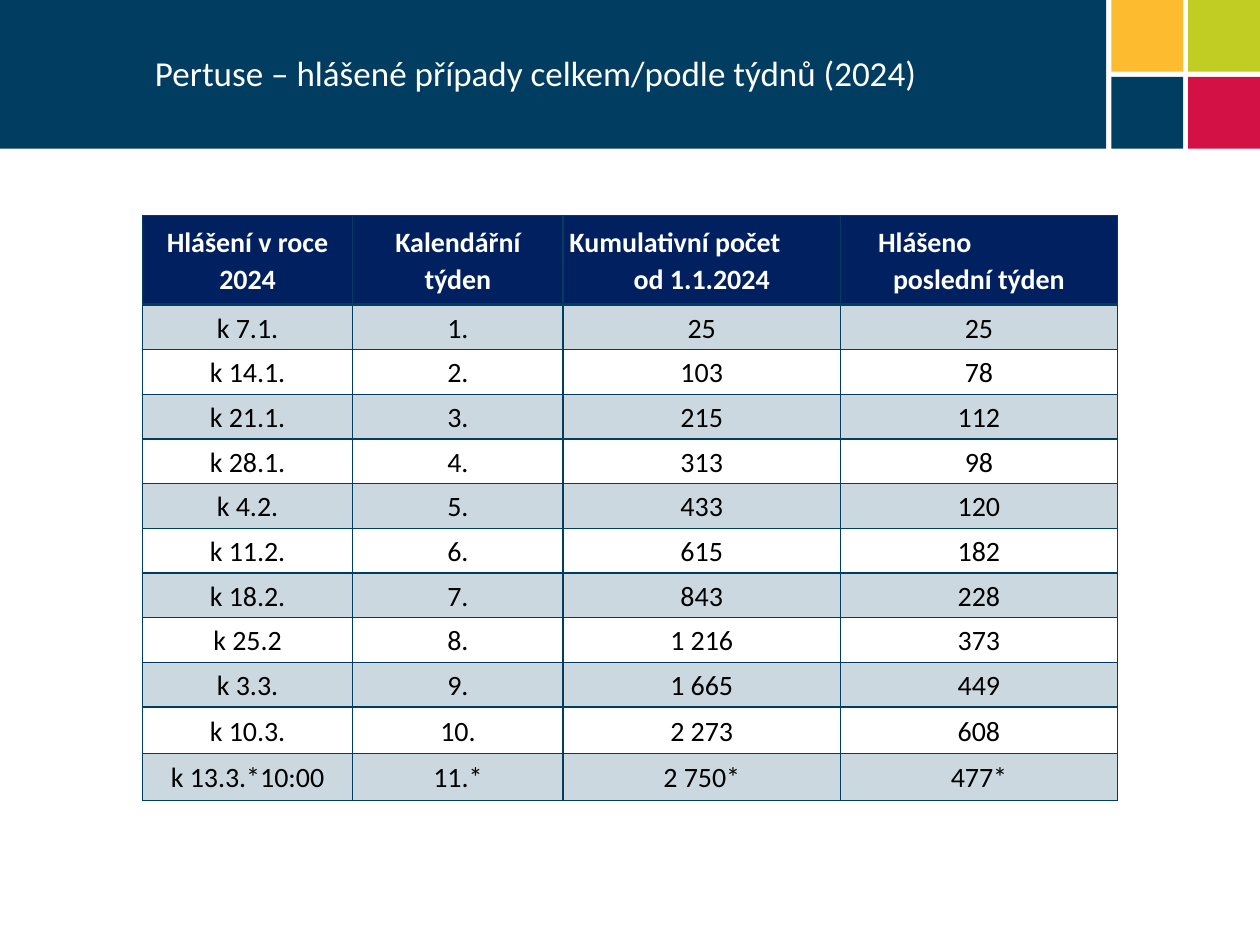
from dataclasses import dataclass

from lxml.etree import SubElement
from pptx import Presentation
from pptx.dml.color import RGBColor
from pptx.enum.shapes import MSO_SHAPE
from pptx.enum.text import MSO_ANCHOR, PP_ALIGN
from pptx.oxml.ns import qn
from pptx.util import Inches, Pt


@dataclass(frozen=True)
class Theme:
    font: str = "Calibri"
    title_size: int = 20
    table_size: int = 16
    navy: str = "003D61"
    header: str = "002060"
    red: str = "D31145"
    green: str = "C2CD23"
    yellow: str = "FDBB30"
    white: str = "FFFFFF"
    black: str = "000000"
    band_opacity: int = 20


@dataclass(frozen=True)
class Block:
    left: float
    top: float
    width: float
    height: float
    color: str


@dataclass(frozen=True)
class Line:
    text: str
    alignment: PP_ALIGN = PP_ALIGN.CENTER
    indent: float = 0


THEME = Theme()
TILE = 0.57
BLOCKS = [
    Block(0, 0, 8.78, 1.18, THEME.navy),
    Block(9.43, 0.61, TILE, TILE, THEME.red),
    Block(9.43, 0, TILE, TILE, THEME.green),
    Block(8.82, 0.61, TILE, TILE, THEME.navy),
    Block(8.82, 0, TILE, TILE, THEME.yellow),
]
COLUMN_WIDTHS = [1.67, 1.67, 2.2, 2.2]
ROW_HEIGHTS = [0.71] + [0.355] * 9 + [0.37] * 2
HEADERS = [
    [Line("Hlášení v roce 2024")],
    [Line("Kalendářní týden")],
    [Line("Kumulativní počet", PP_ALIGN.LEFT), Line("od 1.1.2024")],
    [Line("Hlášeno", PP_ALIGN.LEFT, 0.25), Line("poslední týden")],
]
REPORTS = [
    ("k 7.1.", "1.", "25", "25"),
    ("k 14.1.", "2.", "103", "78"),
    ("k 21.1.", "3.", "215", "112"),
    ("k 28.1.", "4.", "313", "98"),
    ("k 4.2.", "5.", "433", "120"),
    ("k 11.2.", "6.", "615", "182"),
    ("k 18.2.", "7.", "843", "228"),
    ("k 25.2", "8.", "1 216", "373"),
    ("k 3.3.", "9.", "1 665", "449"),
    ("k 10.3.", "10.", "2 273", "608"),
    ("k 13.3.*10:00", "11.*", "2 750*", "477*"),
]


def add_run(paragraph, text: str, size: int, color: str, bold: bool = False) -> None:
    run = paragraph.add_run()
    run.text = text
    run.font.name = THEME.font
    run.font.size = Pt(size)
    run.font.bold = bold
    run.font.color.rgb = RGBColor.from_string(color)


def add_block(slide, block: Block) -> None:
    shape = slide.shapes.add_shape(
        MSO_SHAPE.RECTANGLE, Inches(block.left), Inches(block.top),
        Inches(block.width), Inches(block.height))
    shape.shadow.inherit = False
    shape.fill.solid()
    shape.fill.fore_color.rgb = RGBColor.from_string(block.color)
    shape.line.fill.background()


def add_title(slide, text: str) -> None:
    title = slide.shapes.title
    title.left, title.top = Inches(1.13), Inches(0)
    title.width, title.height = Inches(7.43), Inches(1.15)
    title.text_frame.vertical_anchor = MSO_ANCHOR.MIDDLE
    paragraph = title.text_frame.paragraphs[0]
    paragraph.alignment = PP_ALIGN.LEFT
    add_run(paragraph, text, THEME.title_size, THEME.white)
    # The title comes after the banner in the drawing order.
    title.element.getparent().append(title.element)


def set_borders(cell, top: float, bottom: float) -> None:
    """Draw all four edges; top and bottom are line widths in points."""
    properties = cell._tc.get_or_add_tcPr()
    for edge, width in (("lnL", 1), ("lnR", 1), ("lnT", top), ("lnB", bottom)):
        line = SubElement(properties, qn(f"a:{edge}"), w=str(Pt(width)))
        fill = SubElement(line, qn("a:solidFill"))
        SubElement(fill, qn("a:srgbClr"), val=THEME.navy)


def fill_cell(cell, row: int) -> None:
    """Fill the header solid and every other data row with a pale band."""
    if row and row % 2 == 0:
        cell.fill.background()
        return
    cell.fill.solid()
    cell.fill.fore_color.rgb = RGBColor.from_string(THEME.navy if row else THEME.header)
    if row:
        color = cell._tc.tcPr.find(qn("a:solidFill")).find(qn("a:srgbClr"))
        SubElement(color, qn("a:alpha"), val=str(THEME.band_opacity * 1000))


def write_cell(cell, lines: list[Line], is_header: bool) -> None:
    cell.vertical_anchor = MSO_ANCHOR.MIDDLE
    cell.margin_left = cell.margin_right = Inches(0.05)
    cell.margin_top = cell.margin_bottom = 0
    for index, line in enumerate(lines):
        frame = cell.text_frame
        paragraph = frame.add_paragraph() if index else frame.paragraphs[0]
        paragraph.alignment = line.alignment
        paragraph.line_spacing = 1.07
        paragraph.space_after = Pt(8 if line is lines[-1] else 0)
        if line.indent:
            paragraph._p.get_or_add_pPr().set("marL", str(Inches(line.indent)))
        color = THEME.white if is_header else THEME.black
        add_run(paragraph, line.text, THEME.table_size, color, is_header)


def add_report_table(slide) -> None:
    rows = [HEADERS] + [[[Line(text)] for text in report] for report in REPORTS]
    table = slide.shapes.add_table(
        len(rows), len(COLUMN_WIDTHS), Inches(1.13), Inches(1.71),
        Inches(sum(COLUMN_WIDTHS)), Inches(sum(ROW_HEIGHTS))).table
    table.horz_banding = False
    for column, width in zip(table.columns, COLUMN_WIDTHS):
        column.width = Inches(width)
    for row_index, (height, row) in enumerate(zip(ROW_HEIGHTS, rows)):
        table.rows[row_index].height = Inches(height)
        for column_index, lines in enumerate(row):
            cell = table.cell(row_index, column_index)
            write_cell(cell, lines, row_index == 0)
            set_borders(cell, 2 if row_index == 1 else 1, 2 if row_index == 0 else 1)
            fill_cell(cell, row_index)


def main() -> None:
    presentation = Presentation()
    presentation.slide_width, presentation.slide_height = Inches(10), Inches(7.5)
    slide = presentation.slides.add_slide(presentation.slide_layouts.get_by_name("Title Only"))
    for block in BLOCKS:
        add_block(slide, block)
    add_title(slide, "Pertuse – hlášené případy celkem/podle týdnů (2024)")
    add_report_table(slide)
    presentation.save("out.pptx")


if __name__ == "__main__":
    main()
